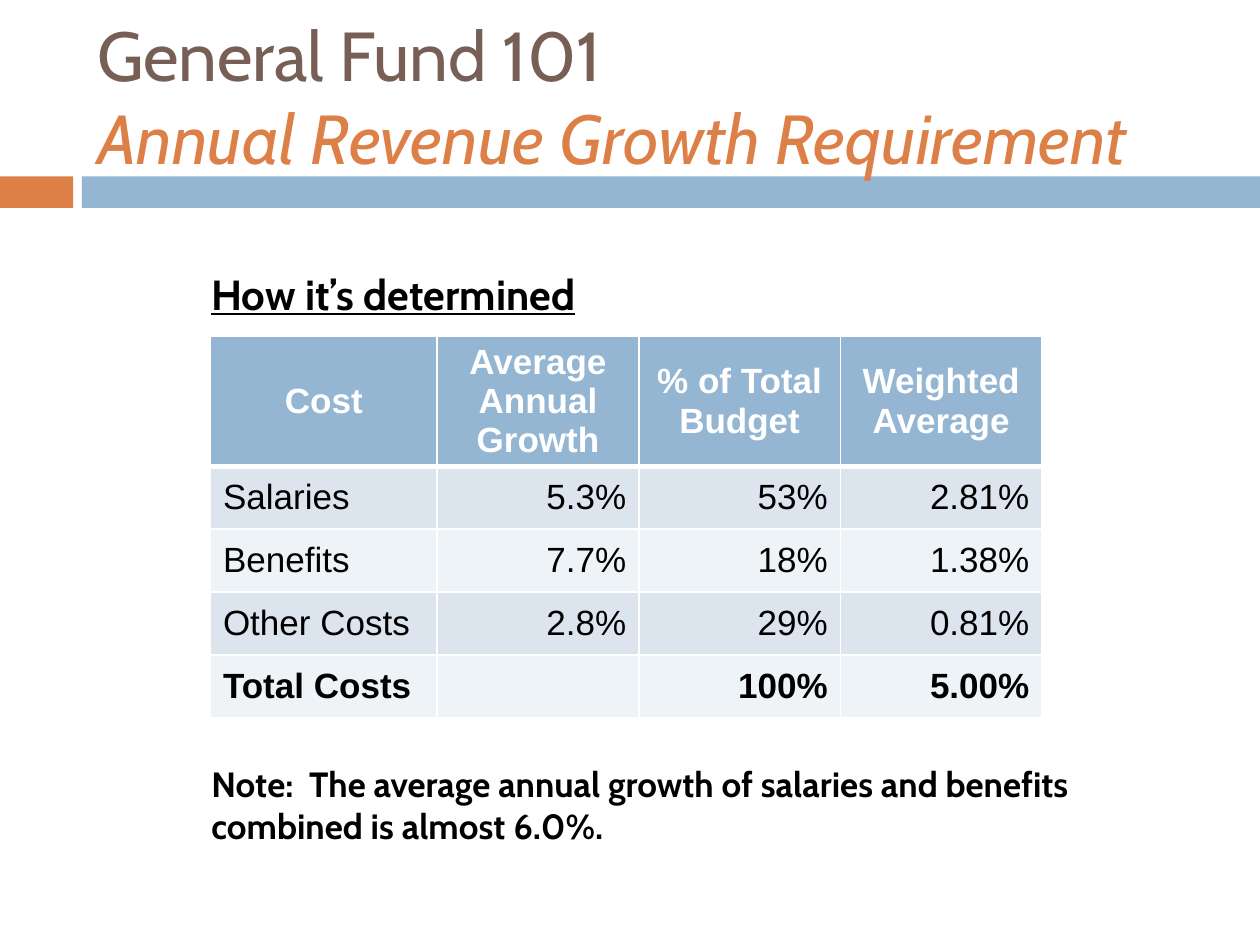
import pptx
import pptx.util
import pptx.dml.color
import pptx.enum.shapes
import pptx.enum.text
import pptx.oxml

Inches = pptx.util.Inches
Pt = pptx.util.Pt
RGBColor = pptx.dml.color.RGBColor
Align = pptx.enum.text.PP_ALIGN
Anchor = pptx.enum.text.MSO_ANCHOR

WHITE = RGBColor(0xFF, 0xFF, 0xFF)
BLACK = RGBColor(0x00, 0x00, 0x00)
ORANGE = RGBColor(0xDD, 0x80, 0x47)
BLUE = RGBColor(0x94, 0xB6, 0xD2)
BROWN = RGBColor(0x77, 0x5F, 0x55)
BANDS = [RGBColor(0xDC, 0xE5, 0xEE), RGBColor(0xEE, 0xF3, 0xF7)]
NS = "http://schemas.openxmlformats.org/drawingml/2006/main"


def add_run(para, text, size, font, color, bold=False):
    run = para.add_run()
    run.text = text
    run.font.size = Pt(size)
    run.font.name = font
    run.font.color.rgb = color
    run.font.bold = bold
    return run


def add_edge(cell, index, side, width):
    edge = pptx.oxml.parse_xml(
        f'<a:{side} xmlns:a="{NS}" w="{Pt(width)}"><a:solidFill>'
        f'<a:srgbClr val="{WHITE}"/></a:solidFill></a:{side}>')
    cell._tc.get_or_add_tcPr().insert(index, edge)


deck = pptx.Presentation()
deck.slide_width = Inches(10)
deck.slide_height = Inches(7.5)
slide = deck.slides.add_slide(deck.slide_layouts[5])

for left, width, color in [(0, 0.58, ORANGE), (0.65, 9.35, BLUE)]:
    bar = slide.shapes.add_shape(
        pptx.enum.shapes.MSO_SHAPE.RECTANGLE,
        Inches(left), Inches(1.4), Inches(width), Inches(0.25))
    bar.shadow.inherit = False
    bar.fill.solid()
    bar.fill.fore_color.rgb = color
    bar.line.fill.background()

title = slide.shapes.title
title.left, title.top = Inches(0.67), Inches(0.17)
title.width, title.height = Inches(8.92), Inches(1.17)
slide.shapes._spTree.append(title._element)
frame = title.text_frame
frame.auto_size = pptx.enum.text.MSO_AUTO_SIZE.NONE
frame.vertical_anchor = Anchor.MIDDLE
para = frame.paragraphs[0]
para.alignment = Align.LEFT
add_run(para, "General Fund 101", 39.6, "Cabin", BROWN)
para.add_line_break()
add_run(para, "Annual Revenue Growth Requirement", 39.6, "Cabin", ORANGE).font.italic = True

rows = [
    ["Cost", "Average Annual Growth", "% of Total\nBudget", "Weighted\nAverage"],
    ["Salaries", "5.3%", "53%", "2.81%"],
    ["Benefits", "7.7%", "18%", "1.38%"],
    ["Other Costs", "2.8%", "29%", "0.81%"],
    ["Total Costs", "", "100%", "5.00%"],
]
last = len(rows) - 1
table = slide.shapes.add_table(
    len(rows), 4, Inches(1.67), Inches(2.67), Inches(6.6), Inches(2.8)).table
for c, width in enumerate([1.8, 1.6, 1.6, 1.6]):
    table.columns[c].width = Inches(width)

for r, row in enumerate(rows):
    head = r == 0
    table.rows[r].height = Inches(0.8 if head else 0.5)
    for c, text in enumerate(row):
        cell = table.cell(r, c)
        cell.vertical_anchor = Anchor.MIDDLE
        cell.fill.solid()
        cell.fill.fore_color.rgb = BLUE if head else BANDS[(r - 1) % 2]
        top = 3 if r == 1 else 1
        low = 3 if head else 1
        for i, (side, width) in enumerate(
                [("lnL", 1), ("lnR", 1), ("lnT", top), ("lnB", low)]):
            add_edge(cell, i, side, width)
        for i, line in enumerate(text.split("\n")):
            frame = cell.text_frame
            para = frame.add_paragraph() if i else frame.paragraphs[0]
            para.alignment = Align.CENTER if head else Align.RIGHT if c else Align.LEFT
            if line:
                add_run(para, line, 20, "Arial", WHITE if head else BLACK, r in (0, last))
            else:
                para.font.size = Pt(20)

notes = [
    (6, 7.17, 0.77, 20, False,
     "Note:  The average annual growth of salaries and benefits combined is almost 6.0%."),
    (2.08, 6.42, 0.5, 24, True, "How it’s determined"),
]
for top, width, height, size, under, text in notes:
    box = slide.shapes.add_textbox(
        Inches(1.58), Inches(top), Inches(width), Inches(height))
    box.text_frame.word_wrap = True
    box.text_frame.auto_size = pptx.enum.text.MSO_AUTO_SIZE.SHAPE_TO_FIT_TEXT
    run = add_run(box.text_frame.paragraphs[0], text, size, "Cabin", BLACK, True)
    run.font.underline = under

deck.save("out.pptx")
